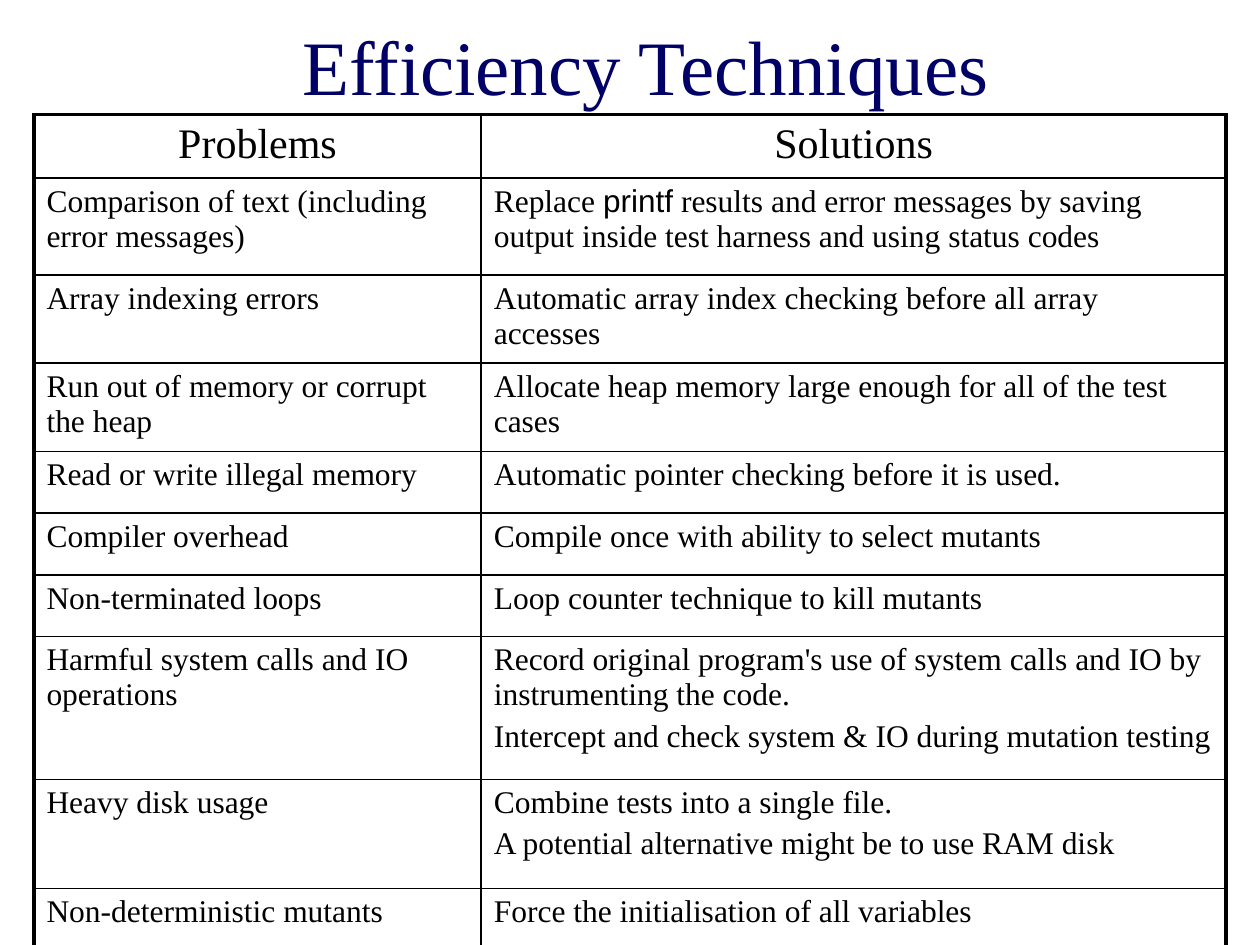
from dataclasses import dataclass

from lxml import etree
from pptx import Presentation
from pptx.dml.color import RGBColor
from pptx.enum.text import MSO_ANCHOR, PP_ALIGN
from pptx.oxml.ns import qn
from pptx.util import Pt

CENTER, LEFT = PP_ALIGN.CENTER, PP_ALIGN.LEFT
MIDDLE = MSO_ANCHOR.MIDDLE


@dataclass(frozen=True)
class Theme:
    title_color: str = "000066"
    ink: str = "000000"
    serif: str = "Times New Roman"
    sans: str = "Arial"
    title_size: float = 44
    header_size: float = 24
    body_size: float = 18
    outer_line: float = 2.25
    inner_line: float = 1


THEME = Theme()
BLANK_LAYOUT = 6
COLUMN_WIDTHS = (255.6, 425.6)
ROW_HEIGHTS = (28, 55.4, 50, 50.2, 35.3, 35.3, 35.3, 81.6, 62.4, 35.3)

# Each cell is a list of paragraphs; a paragraph is a list of (text, font) runs
# or a plain string.
HEADER = (["Problems"], ["Solutions"])
TECHNIQUES = (
    (["Comparison of text (including error messages)"],
     [[("Replace ", THEME.serif), ("printf", THEME.sans),
       (" results and error messages by saving output inside test harness "
        "and using status codes", THEME.serif)]]),
    (["Array indexing errors"],
     ["Automatic array index checking before all array accesses"]),
    (["Run out of memory or corrupt the heap"],
     ["Allocate heap memory large enough for all of the test cases"]),
    (["Read or write illegal memory"],
     ["Automatic pointer checking before it is used."]),
    (["Compiler overhead"], ["Compile once with ability to select mutants"]),
    (["Non-terminated loops"], ["Loop counter technique to kill mutants"]),
    (["Harmful system calls and IO operations"],
     ["Record original program's use of system calls and IO by "
      "instrumenting the code.",
      "Intercept and check system & IO during mutation testing"]),
    (["Heavy disk usage"],
     ["Combine tests into a single file.",
      "A potential alternative might be to use RAM disk"]),
    (["Non-deterministic mutants"],
     ["Force the initialisation of all variables"]),
)


def write_text(frame, paragraphs, *, size, color=THEME.ink, align=LEFT):
    """Fill a text frame; later paragraphs get 20% space before."""
    for index, content in enumerate(paragraphs):
        paragraph = frame.add_paragraph() if index else frame.paragraphs[0]
        paragraph.alignment = align
        if index:
            paragraph.space_before = Pt(0.2 * size)
        runs = [(content, THEME.serif)] if isinstance(content, str) else content
        for text, font_name in runs:
            run = paragraph.add_run()
            run.text = text
            run.font.name = font_name
            run.font.size = Pt(size)
            run.font.color.rgb = RGBColor.from_string(color)


def add_border(cell, side, width):
    properties = cell._tc.get_or_add_tcPr()
    line = etree.SubElement(properties, qn(f"a:ln{side}"), w=str(Pt(width)))
    fill = etree.SubElement(line, qn("a:solidFill"))
    etree.SubElement(fill, qn("a:srgbClr"), val=THEME.ink)


def add_title(slide):
    title = slide.shapes.add_textbox(Pt(36), Pt(3.6), Pt(666), Pt(66.2))
    title.text_frame.word_wrap = True
    title.text_frame.vertical_anchor = MIDDLE
    write_text(title.text_frame, ["Efficiency Techniques"],
               size=THEME.title_size, color=THEME.title_color, align=CENTER)


def add_techniques_table(slide):
    rows = (HEADER, *TECHNIQUES)
    last_row, last_column = len(rows) - 1, len(COLUMN_WIDTHS) - 1
    table = slide.shapes.add_table(
        len(rows), len(COLUMN_WIDTHS), Pt(19.4), Pt(65.6),
        Pt(sum(COLUMN_WIDTHS)), Pt(sum(ROW_HEIGHTS))).table
    table.first_row = table.horz_banding = False
    for column, width in zip(table.columns, COLUMN_WIDTHS):
        column.width = Pt(width)

    for r, (contents, height) in enumerate(zip(rows, ROW_HEIGHTS)):
        table.rows[r].height = Pt(height)
        for c, paragraphs in enumerate(contents):
            cell = table.cell(r, c)
            # Heavy rule around the table, thin rules inside
            outer_sides = {"L": c == 0, "R": c == last_column,
                           "T": r == 0, "B": r == last_row}
            for side, is_outer in outer_sides.items():
                add_border(cell, side,
                           THEME.outer_line if is_outer else THEME.inner_line)
            cell.fill.background()
            write_text(cell.text_frame, paragraphs,
                       size=THEME.body_size if r else THEME.header_size,
                       align=LEFT if r else CENTER)


def main():
    deck = Presentation()
    deck.slide_width, deck.slide_height = Pt(720), Pt(540)
    slide = deck.slides.add_slide(deck.slide_layouts[BLANK_LAYOUT])
    add_title(slide)
    add_techniques_table(slide)
    deck.save("out.pptx")


if __name__ == "__main__":
    main()
